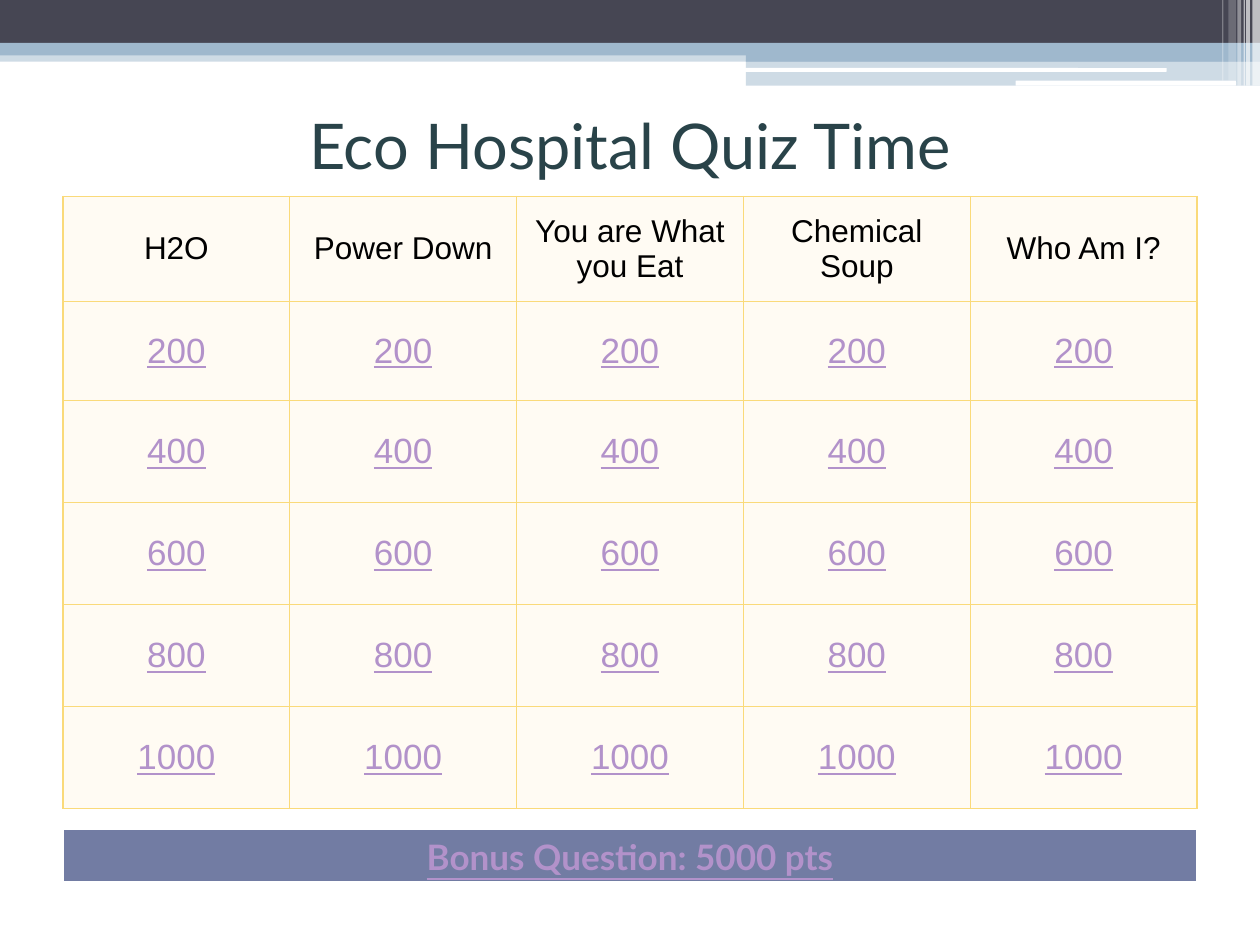
import pptx
import pptx.dml.color
import pptx.enum.shapes
import pptx.enum.text
import pptx.oxml
import pptx.oxml.ns
import pptx.util

INCH = pptx.util.Inches
MARGIN = 0.5
CONTENT_WIDTH = 9
CATEGORIES = ["H2O", "Power Down", "You are What you Eat", "Chemical Soup", "Who Am I?"]
POINTS = [200, 400, 600, 800, 1000]
ROW_HEIGHTS = [0.83, 0.79] + [0.81] * 4
LINK = "B292CA"
HEADER_BARS = [
    (0, 0.4, 10, 0.09, "9FB8CD", 50),
    (0, 0, 10, 0.34, "464653", 100),
    (0, 0.34, 10, 0.1, "9FB8CD", 100),
    (5.92, 0.39, 4.08, 0.1, "9FB8CD", 100),
    (5.92, 0.48, 4.08, 0.2, "9FB8CD", 50),
]
HEADER_LINES = [(5.91, 0.54, 3.35, 0.03), (8.06, 0.64, 1.75, 0.04)]
CORNER_STRIPES = [
    (9.94, 0.06, 0.68, 65),
    (9.89, 0.03, 0.68, 65),
    (9.87, 0.01, 0.68, 60),
    (9.82, 0.03, 0.68, 40),
    (9.75, 0.06, 0.64, 20),
    (9.7, 0.01, 0.64, 30),
]


def color(hex_code):
    return pptx.dml.color.RGBColor.from_string(hex_code)


def add_bar(page, left, top, width, height, hex_code, opacity=100, rounded=False):
    kinds = pptx.enum.shapes.MSO_SHAPE
    kind = kinds.ROUNDED_RECTANGLE if rounded else kinds.RECTANGLE
    bar = page.shapes.add_shape(kind, INCH(left), INCH(top), INCH(width), INCH(height))
    bar.shadow.inherit = False
    bar.line.fill.background()
    bar.fill.solid()
    bar.fill.fore_color.rgb = color(hex_code)
    if opacity < 100:
        fill_color = bar._element.spPr.find(".//" + pptx.oxml.ns.qn("a:srgbClr"))
        alpha = pptx.oxml.parse_xml(
            f'<a:alpha {pptx.oxml.ns.nsdecls("a")} val="{opacity * 1000}"/>')
        fill_color.append(alpha)


def write(frame, text, size, font, hex_code, bold=False, underline=False):
    para = frame.paragraphs[0]
    para.alignment = pptx.enum.text.PP_ALIGN.CENTER
    para.font.size = pptx.util.Pt(size)
    para.font.name = font
    para.font.bold = bold
    para.font.underline = underline
    para.font.color.rgb = color(hex_code)
    para.add_run().text = text


def add_title(page, text):
    box = page.shapes.add_textbox(INCH(MARGIN), INCH(0.88), INCH(CONTENT_WIDTH), INCH(0.53))
    box.text_frame.word_wrap = True
    box.text_frame.vertical_anchor = pptx.enum.text.MSO_ANCHOR.MIDDLE
    write(box.text_frame, text, 36, "Lato", "294349")


def add_grid(page, top, row_heights, column_count):
    frame = page.shapes.add_table(
        len(row_heights), column_count, INCH(MARGIN), INCH(top),
        INCH(CONTENT_WIDTH), INCH(sum(row_heights)))
    table = frame.table
    table.first_row = False
    table.horz_banding = False
    for row, height in zip(table.rows, row_heights):
        row.height = INCH(height)
    return table


def style_cell(cell, fill, border, widths):
    cell.fill.solid()
    cell.fill.fore_color.rgb = color(fill)
    properties = cell._tc.get_or_add_tcPr()
    for index, (side, width) in enumerate(zip("LRTB", widths)):
        properties.insert(index, pptx.oxml.parse_xml(
            f'<a:ln{side} {pptx.oxml.ns.nsdecls("a")} w="{pptx.util.Pt(width)}">'
            f'<a:solidFill><a:srgbClr val="{border}"/></a:solidFill></a:ln{side}>'))


def add_board(page):
    table = add_grid(page, 1.56, ROW_HEIGHTS, len(CATEGORIES))
    for column, category in enumerate(CATEGORIES):
        for row, text in enumerate([category] + POINTS):
            cell = table.cell(row, column)
            style_cell(cell, "FFFBF3", "FADA7A", [0.75] * 4)
            cell.vertical_anchor = pptx.enum.text.MSO_ANCHOR.MIDDLE
            if row == 0:
                write(cell.text_frame, text, 18, "Arial", "000000")
            else:
                write(cell.text_frame, str(text), 20, "Arial", LINK, underline=True)


def add_bonus(page):
    cell = add_grid(page, 6.58, [0.43], 1).cell(0, 0)
    style_cell(cell, "727CA3", "FFFFFF", [1, 1, 1, 3])
    write(cell.text_frame, "Bonus Question: 5000 pts", 20, "Lato", LINK,
          bold=True, underline=True)


def main():
    deck = pptx.Presentation()
    deck.slide_width = INCH(10)
    deck.slide_height = INCH(7.5)
    page = deck.slides.add_slide(deck.slide_layouts[6])
    for bar in HEADER_BARS:
        add_bar(page, *bar)
    for line in HEADER_LINES:
        add_bar(page, *line, "FFFFFF", rounded=True)
    for left, width, height, opacity in CORNER_STRIPES:
        add_bar(page, left, 0, width, height, "FFFFFF", opacity)
    add_title(page, "Eco Hospital Quiz Time")
    add_board(page)
    add_bonus(page)
    deck.save("out.pptx")


if __name__ == "__main__":
    main()
